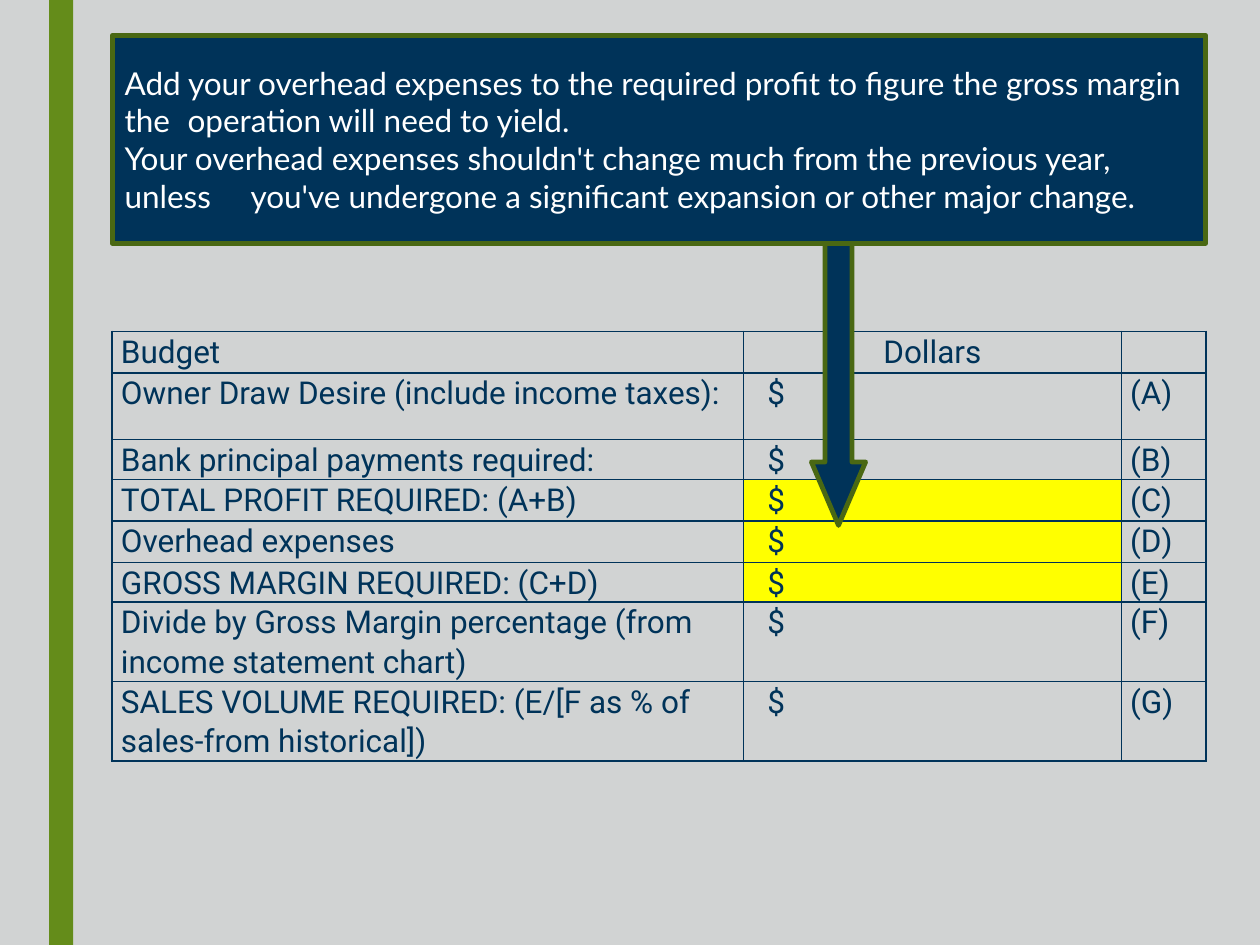
from lxml import etree
from pptx import Presentation
from pptx.dml.color import RGBColor
from pptx.enum.shapes import MSO_SHAPE
from pptx.enum.text import MSO_ANCHOR, PP_ALIGN
from pptx.oxml.ns import qn
from pptx.util import Inches, Pt

RECT, ARROW = MSO_SHAPE.RECTANGLE, MSO_SHAPE.DOWN_ARROW
LEFT, CENTER = PP_ALIGN.LEFT, PP_ALIGN.CENTER
MIDDLE = MSO_ANCHOR.MIDDLE

COLORS = {"back": "D1D3D3", "bar": "648C1A", "navy": "003359",
          "edge": "4A6813", "mark": "FFFF00", "white": "FFFFFF"}

COLS = [5.01, 3, 0.67]
ROWS = [0.33, 0.53, 0.31, 0.33, 0.33, 0.31, 0.63, 0.63]
LABELS = [
    "Owner Draw Desire (include income taxes):",
    "Bank principal payments required:",
    "TOTAL PROFIT REQUIRED: (A+B)",
    "Overhead expenses",
    "GROSS MARGIN REQUIRED: (C+D)",
    "Divide by Gross Margin percentage (from income statement chart)",
    "SALES VOLUME REQUIRED: (E/[F as % of sales-from historical])",
]
BUDGET = [("Budget", "Dollars", "")]
BUDGET += [(label, "$", f"({key})") for label, key in zip(LABELS, "ABCDEFG")]
MARKED = {(row, 1) for row in (3, 4, 5)}
ADVICE = [
    "Add your overhead expenses to the required profit to figure the gross "
    "margin the \toperation will need to yield.",
    "Your overhead expenses shouldn't change much from the previous year, "
    "unless \tyou've undergone a significant expansion or other major change.",
]


def rgb(name):
    return RGBColor.from_string(COLORS[name])


class Deck:
    """Holds the text style and the current slide."""

    size = Pt(18)

    def __init__(self):
        self.prs = Presentation()
        self.prs.slide_width, self.prs.slide_height = Inches(10), Inches(7.5)
        self.slide = self.prs.slides.add_slide(self.prs.slide_layouts[6])
        fill = self.slide.background.fill
        fill.solid()
        fill.fore_color.rgb = rgb("back")

    def shape(self, kind, box, fill, edge=None):
        shape = self.slide.shapes.add_shape(kind, *map(Inches, box))
        shape.shadow.inherit = False
        shape.fill.solid()
        shape.fill.fore_color.rgb = rgb(fill)
        if edge:
            shape.line.color.rgb = rgb(edge)
            shape.line.width = Pt(2.75)
        else:
            shape.line.fill.background()
        return shape

    def text(self, para, words, face, color, **form):
        for name, value in form.items():
            setattr(para, name, value)
        if words:
            run = para.add_run()
            run.text = words
            for name, value in {"name": face, "size": self.size}.items():
                setattr(run.font, name, value)
            run.font.color.rgb = rgb(color)

    def tabs(self, para, stops):
        tab_list = etree.SubElement(para._p.get_or_add_pPr(), qn("a:tabLst"))
        for stop in stops:
            etree.SubElement(tab_list, qn("a:tab"), pos=str(Inches(stop)), algn="l")

    def note(self, box, lines):
        frame = self.shape(RECT, box, "navy", "edge").text_frame
        frame.word_wrap = True
        frame.vertical_anchor = MIDDLE
        for i, line in enumerate(lines):
            para = frame.add_paragraph() if i else frame.paragraphs[0]
            self.tabs(para, (0.5, 1))
            self.text(para, line, "Lato", "white", alignment=LEFT)

    def border(self, cell):
        props = cell._tc.get_or_add_tcPr()
        for side in "LRTB":
            line = etree.SubElement(props, qn(f"a:ln{side}"), w=str(Pt(1)))
            solid = etree.SubElement(line, qn("a:solidFill"))
            etree.SubElement(solid, qn("a:srgbClr"), val=COLORS["navy"])

    def table(self, left, top, data, marked):
        size = sum(COLS), sum(ROWS)
        table = self.slide.shapes.add_table(
            len(ROWS), len(COLS), *map(Inches, (left, top, *size))).table
        table.first_row = table.horz_banding = False
        for col, width in zip(table.columns, COLS):
            col.width = Inches(width)
        for row, height in zip(table.rows, ROWS):
            row.height = Inches(height)
        for r, texts in enumerate(data):
            for c, words in enumerate(texts):
                cell = table.cell(r, c)
                inset = 0.19 if words == "$" else 0.07
                margins = {"left": inset, "right": 0.07, "top": 0, "bottom": 0}
                for side, gap in margins.items():
                    setattr(cell, f"margin_{side}", Inches(gap))
                self.border(cell)
                if (r, c) in marked:
                    cell.fill.solid()
                    cell.fill.fore_color.rgb = rgb("mark")
                else:
                    cell.fill.background()
                self.text(cell.text_frame.paragraphs[0], words, "Roboto", "navy",
                          line_spacing=1.07,
                          alignment=CENTER if (r, c) == (0, 1) else LEFT)

    def arrow(self, box, head):
        arrow = self.shape(ARROW, box, "navy", "edge")
        arrow.adjustments[0], arrow.adjustments[1] = 0.5, head


def main():
    deck = Deck()
    deck.shape(RECT, (0.39, 0, 0.19, 7.5), "bar")
    deck.table(0.89, 2.63, BUDGET, MARKED)
    deck.arrow((6.44, 1.5, 0.43, 2.67), 1.17)
    deck.note((0.89, 0.28, 8.68, 1.65), ADVICE)
    deck.prs.save("out.pptx")


if __name__ == "__main__":
    main()
